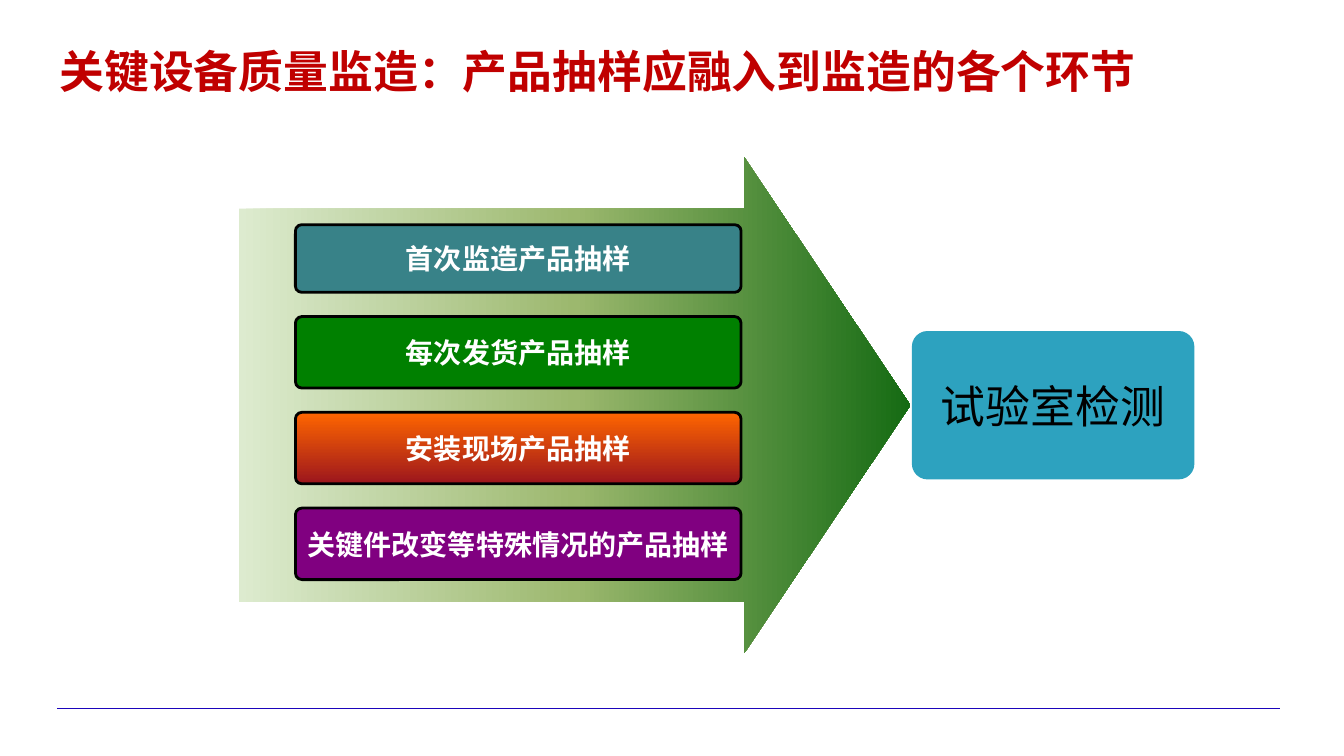
from lxml.etree import SubElement
from pptx import Presentation
from pptx.dml.color import RGBColor
from pptx.enum.shapes import MSO_CONNECTOR, MSO_SHAPE
from pptx.enum.text import MSO_ANCHOR, MSO_AUTO_SIZE, PP_ALIGN
from pptx.oxml.ns import qn
from pptx.util import Inches, Pt

CJK_FONT = "Noto Sans CJK SC"
SAMPLINGS = [
    ("首次监造产品抽样", 0.67, ["388288"]),
    ("每次发货产品抽样", 0.71, ["008000"]),
    ("安装现场产品抽样", 0.71, ["FF6600", "9C161D"]),
    ("关键件改变等特殊情况的产品抽样", 0.71, ["800080"]),
]


def color(hex_string):
    """Turn a hex string into a colour."""
    return RGBColor.from_string(hex_string)


def paint(shape, colors, angle=0):
    """Fill a shape with one colour, or with an even gradient of several."""
    if len(colors) == 1:
        shape.fill.solid()
        shape.fill.fore_color.rgb = color(colors[0])
        return
    shape.fill.gradient()
    shape.fill.gradient_angle = angle
    stops = shape._element.spPr.find(".//" + qn("a:gsLst"))
    stops.clear()
    for index, hex_string in enumerate(colors):
        position = 100000 * index // (len(colors) - 1)
        stop = SubElement(stops, qn("a:gs"), pos=str(position))
        SubElement(stop, qn("a:srgbClr"), val=hex_string)


def write(shape, text, size, hex_string, font="Arial", bold=False, align=PP_ALIGN.CENTER):
    """Set one vertically centred paragraph and format it."""
    frame = shape.text_frame
    frame.text = text
    frame.vertical_anchor = MSO_ANCHOR.MIDDLE
    para = frame.paragraphs[0]
    para.alignment = align
    span = para.runs[0]
    span.font.name = font
    span.font.size = Pt(size)
    span.font.bold = bold
    span.font.color.rgb = color(hex_string)
    SubElement(span._r.get_or_add_rPr(), qn("a:ea"), typeface=CJK_FONT)


def add_box(page, kind, left, top, width, height, colors, angle=0):
    """Add a filled preset shape without shadow or outline."""
    box = page.shapes.add_shape(kind, Inches(left), Inches(top), Inches(width), Inches(height))
    box.shadow.inherit = False
    box.line.fill.background()
    paint(box, colors, angle)
    return box


def add_rounded(page, left, top, width, height, colors, outline, weight):
    """Add an outlined rounded rectangle, shaded downwards if it has a gradient."""
    box = add_box(page, MSO_SHAPE.ROUNDED_RECTANGLE, left, top, width, height, colors, 270)
    box.adjustments[0] = 0.091
    box.line.color.rgb = color(outline)
    box.line.width = Pt(weight)
    return box


def add_title(page, left, top, width, height):
    """Place the slide title."""
    title = page.shapes.title
    title.left, title.top = Inches(left), Inches(top)
    title.width, title.height = Inches(width), Inches(height)
    title.text_frame.auto_size = MSO_AUTO_SIZE.NONE
    write(title, "关键设备质量监造：产品抽样应融入到监造的各个环节", 32, "C00000",
          CJK_FONT, True, PP_ALIGN.LEFT)


def add_footer_rule(page, left, top, width):
    """Draw the thin rule at the foot of the slide."""
    rule = page.shapes.add_connector(
        MSO_CONNECTOR.STRAIGHT, Inches(left), Inches(top), Inches(left + width), Inches(top))
    rule.line.color.rgb = color("1B05BB")
    rule.line.width = Pt(0.75)
    SubElement(rule._element.spPr, qn("a:effectLst"))


def add_sampling_arrow(page, left, top, width, height):
    """Draw the large arrow with its stack of sampling steps."""
    arrow = add_box(page, MSO_SHAPE.RIGHT_ARROW, left, top, width, height,
                    ["DDEBCF", "9CB86E", "156B13"])
    arrow.adjustments[0] = 0.793
    arrow.adjustments[1] = 0.335
    for index, (text, bar_height, colors) in enumerate(SAMPLINGS):
        bottom = top + 1.34 + 0.95 * index
        bar = add_rounded(page, left + 0.56, bottom - bar_height, 4.42, bar_height,
                          colors, "000000", 2)
        bar.text_frame.word_wrap = False
        write(bar, text, 20, "FFFFFF", bold=True)


def add_laboratory(page, left, top, width, height):
    """Draw the laboratory box at the tip of the arrow."""
    box = add_rounded(page, left, top, width, height, ["2DA2BF"], "2DA2BF", 3.75)
    write(box, "试验室检测", 32, "000000")


def main():
    """Build the slide and save it."""
    deck = Presentation()
    deck.slide_width, deck.slide_height = Inches(13.33), Inches(7.5)
    page = deck.slides.add_slide(deck.slide_layouts[5])
    add_footer_rule(page, 0.57, 7.03, 12.13)
    add_title(page, 0.49, 0.38, 12.11, 0.64)
    add_sampling_arrow(page, 2.37, 1.56, 6.66, 4.92)
    add_laboratory(page, 9.07, 3.31, 2.75, 1.42)
    deck.save("out.pptx")


if __name__ == "__main__":
    main()
